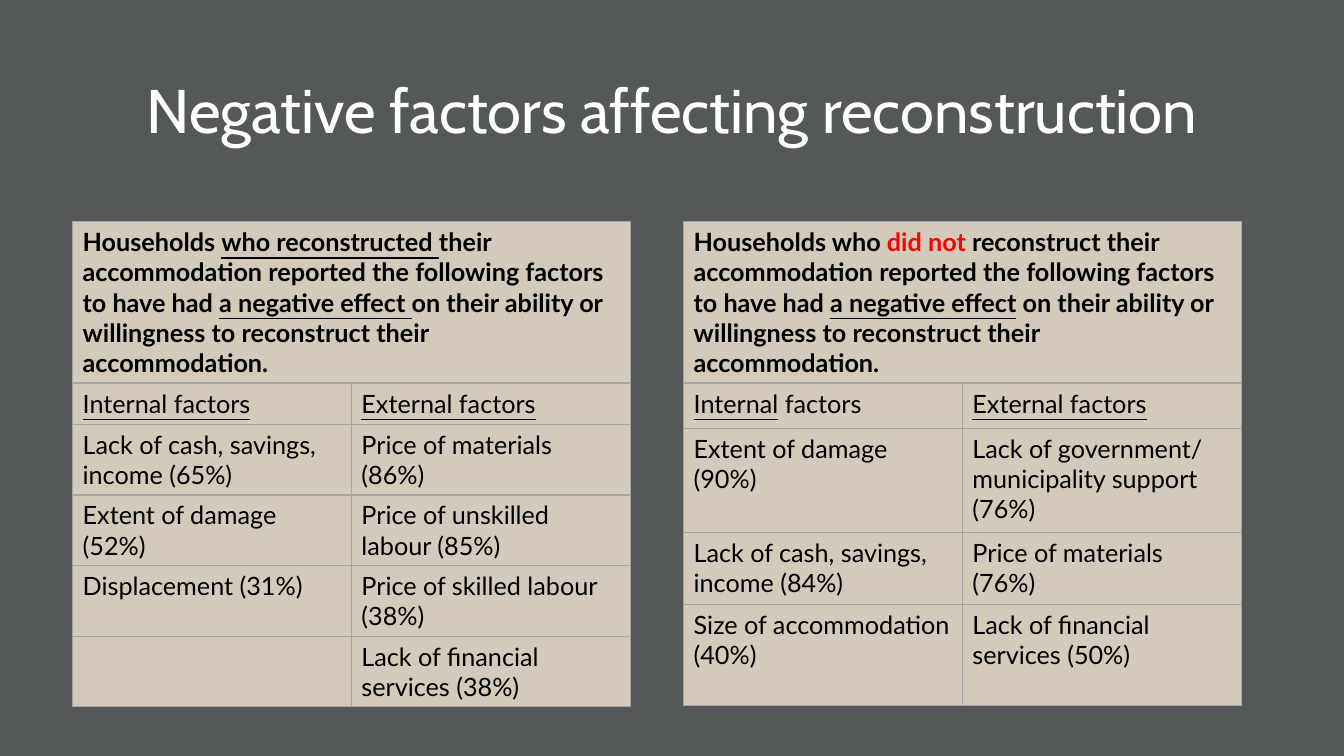
from lxml import etree
from pptx import Presentation
from pptx.dml.color import RGBColor
from pptx.enum import text
from pptx.oxml import ns
from pptx.util import Inches, Pt

COLORS = {"background": "555859", "title": "FFFFFF", "cell": "D4CABB",
          "border": "A5A5A5", "body": "000000", "accent": "FF0000"}
TITLE_FONT, BODY_FONT = "Cabin", "Lato"

# A cell is a list of (wording, style) spans; style is "", "underline" or "accent".
RECONSTRUCTED = [
    [[("Households ", ""), ("who reconstructed ", "underline"),
      ("their accommodation reported the following factors to have had ", ""),
      ("a negative effect ", "underline"),
      ("on their ability or willingness to reconstruct their accommodation.", "")]],
    [[("Internal factors", "underline")], [("External factors", "underline")]],
    [[("Lack of cash, savings, income (65%)", "")], [("Price of materials (86%)", "")]],
    [[("Extent of damage (52%)", "")], [("Price of unskilled labour (85%)", "")]],
    [[("Displacement (31%)", "")], [("Price of skilled labour (38%)", "")]],
    [[], [("Lack of financial services (38%)", "")]],
]
NOT_RECONSTRUCTED = [
    [[("Households who ", ""), ("did not ", "accent"),
      ("reconstruct their accommodation reported the following factors to have had ", ""),
      ("a negative effect", "underline"),
      (" on their ability or willingness to reconstruct their accommodation.", "")]],
    [[("Internal", "underline"), (" factors", "")], [("External factors", "underline")]],
    [[("Extent of damage (90%)", "")],
     [("Lack of government/ municipality support (76%)", "")]],
    [[("Lack of cash, savings, income (84%)", "")], [("Price of materials (76%)", "")]],
    [[("Size of accommodation (40%)", "")], [("Lack of financial services (50%)", "")]],
]


def color(name):
    return RGBColor.from_string(COLORS[name])


def add_span(para, wording, font, size, color_name):
    span = para.add_run()
    span.text = wording
    span.font.name, span.font.size = font, Pt(size)
    span.font.color.rgb = color(color_name)
    return span


def add_title(page, left, top, width, height):
    box = page.shapes.add_textbox(Inches(left), Inches(top), Inches(width), Inches(height))
    frame = box.text_frame
    frame.word_wrap = True
    frame.vertical_anchor = text.MSO_ANCHOR.MIDDLE
    para = frame.paragraphs[0]
    para.alignment = text.PP_ALIGN.CENTER
    para.line_spacing = 0.9
    add_span(para, "Negative factors affecting reconstruction", TITLE_FONT, 44, "title")


def style_cell(cell):
    """Give the cell thin borders on all sides and a plain fill."""
    properties = cell._tc.get_or_add_tcPr()
    for side in ("lnL", "lnR", "lnT", "lnB"):
        line = etree.SubElement(properties, ns.qn(f"a:{side}"), w=str(Pt(1)))
        fill = etree.SubElement(line, ns.qn("a:solidFill"))
        etree.SubElement(fill, ns.qn("a:srgbClr"), val=COLORS["border"])
    cell.fill.solid()
    cell.fill.fore_color.rgb = color("cell")


def fill_cell(cell, spans, bold):
    para = cell.text_frame.paragraphs[0]
    para.font.size = Pt(18)
    for wording, style in spans:
        span = add_span(para, wording, BODY_FONT, 18,
                        "accent" if style == "accent" else "body")
        span.font.bold = bold
        span.font.underline = style == "underline"


def add_factor_table(page, left, top, width, heights, rows):
    """Place a two-column table whose first row is a merged heading."""
    frame = page.shapes.add_table(len(rows), 2, Inches(left), Inches(top),
                                  Inches(width), Inches(sum(heights)))
    table = frame.table
    table.first_row = table.horz_banding = False
    for column in table.columns:
        column.width = Inches(width / 2)
    for row, height in zip(table.rows, heights):
        row.height = Inches(height)
    for cell in table.iter_cells():
        style_cell(cell)
    table.cell(0, 0).merge(table.cell(0, 1))
    for r, row in enumerate(rows):
        for c, spans in enumerate(row):
            fill_cell(table.cell(r, c), spans, bold=r == 0)


def main():
    deck = Presentation()
    deck.slide_width, deck.slide_height = Inches(13.33), Inches(7.5)
    page = deck.slides.add_slide(deck.slide_layouts[6])
    page.background.fill.solid()
    page.background.fill.fore_color.rgb = color("background")
    add_title(page, 0.92, 0.4, 11.5, 1.45)
    add_factor_table(page, 0.72, 2.2, 5.53, [1.6, 0.41] + [0.7] * 4, RECONSTRUCTED)
    add_factor_table(page, 6.78, 2.2, 5.53, [1.6, 0.45, 1.03, 0.72, 1], NOT_RECONSTRUCTED)
    deck.save("out.pptx")


if __name__ == "__main__":
    main()
